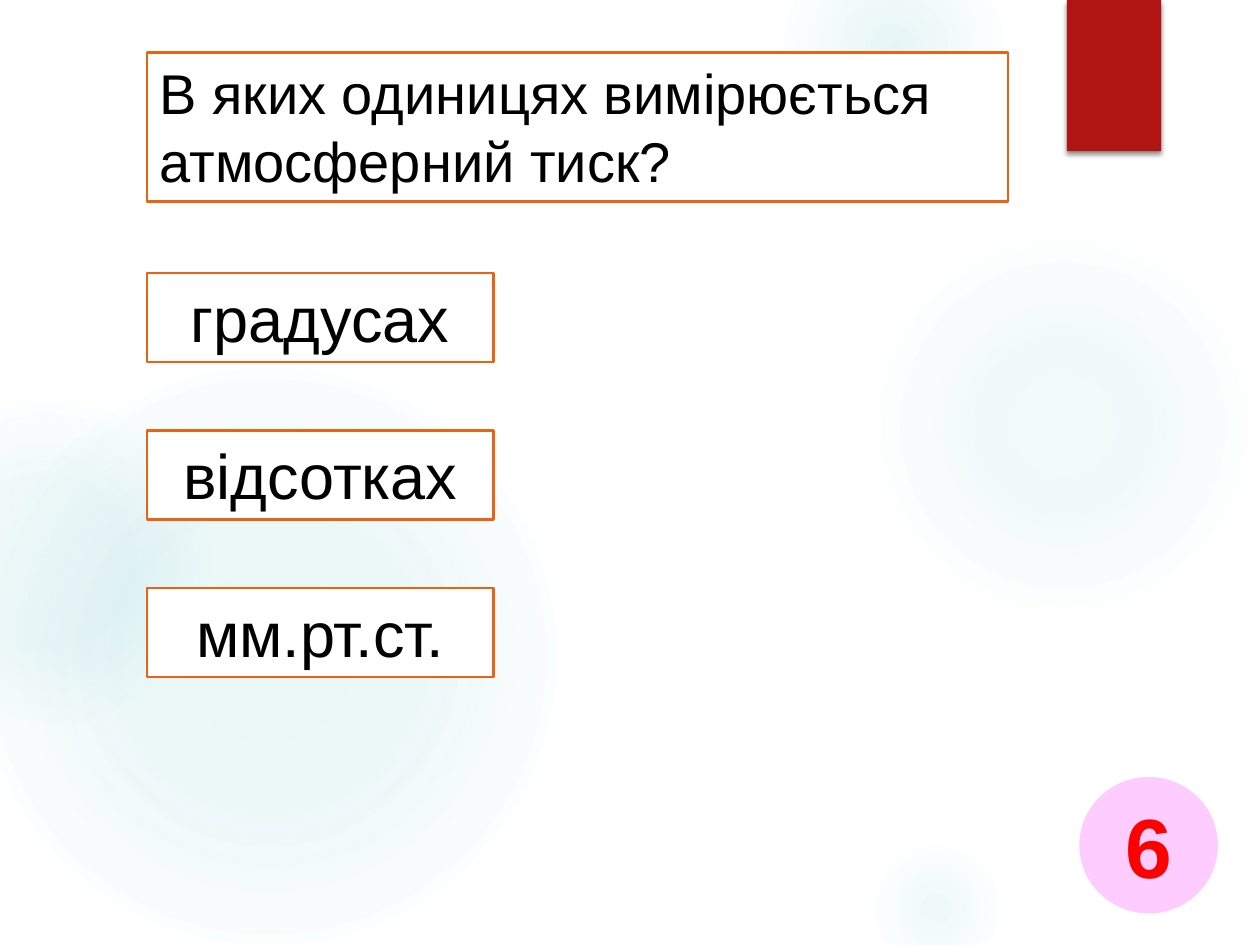
from dataclasses import dataclass

from pptx import Presentation
from pptx.dml.color import RGBColor
from pptx.enum.shapes import MSO_SHAPE
from pptx.enum.text import MSO_ANCHOR, MSO_AUTO_SIZE, PP_ALIGN
from pptx.oxml import parse_xml
from pptx.oxml.ns import nsdecls, qn
from pptx.util import Inches, Pt


@dataclass(frozen=True)
class Theme:
    font: str = "Arial"
    paper: str = "FFFFFF"
    ink: str = "000000"
    border: str = "EA6312"
    ribbon: str = "B01513"
    glow: str = "4CB9C3"
    badge: str = "FFCCFF"
    number: str = "FF0000"
    border_width: float = 1.5
    question_size: int = 32
    answer_size: int = 36
    number_size: int = 48


class QuizSlide:
    """Places elements on a grid of 120 columns by 90 rows."""

    COLUMNS, ROWS = 120, 90

    def __init__(self, presentation, theme):
        self.theme = theme
        self.column = presentation.slide_width / self.COLUMNS
        self.row = presentation.slide_height / self.ROWS
        self.slide = presentation.slides.add_slide(presentation.slide_layouts[5])

    def box(self, column, row, columns, rows):
        return (round(column * self.column), round(row * self.row),
                round(columns * self.column), round(rows * self.row))

    def shape(self, kind, place, color):
        shape = self.slide.shapes.add_shape(kind, *self.box(*place))
        shape.shadow.inherit = False
        shape.line.fill.background()
        self.paint(shape, color)
        return shape

    def paint(self, shape, color):
        shape.fill.solid()
        shape.fill.fore_color.rgb = RGBColor.from_string(color)

    def outline(self, shape):
        shape.line.color.rgb = RGBColor.from_string(self.theme.border)
        shape.line.width = Pt(self.theme.border_width)

    def set_text(self, shape, text, size, color, alignment=PP_ALIGN.CENTER,
                 bold=False, **frame_format):
        frame = shape.text_frame
        frame_format = {"word_wrap": True, "vertical_anchor": MSO_ANCHOR.TOP,
                        "auto_size": MSO_AUTO_SIZE.SHAPE_TO_FIT_TEXT, **frame_format}
        for name, value in frame_format.items():
            setattr(frame, name, value)
        frame.text = text
        paragraph = frame.paragraphs[0]
        paragraph.alignment = alignment
        font = paragraph.runs[0].font
        for name, value in {"name": self.theme.font, "size": Pt(size), "bold": bold}.items():
            setattr(font, name, value)
        font.color.rgb = RGBColor.from_string(color)

    def glow(self, column, row, diameter, stops):
        """Draw a circle that fades outwards; stops are (position, opacity) in percent."""
        place = (column, row, diameter, diameter)
        shape = self.shape(MSO_SHAPE.OVAL, place, self.theme.glow)
        stop_xml = "".join(
            f'<a:gs pos="{position * 1000}"><a:srgbClr val="{self.theme.glow}">'
            f'<a:alpha val="{opacity * 1000}"/></a:srgbClr></a:gs>'
            for position, opacity in stops)
        gradient = parse_xml(
            f'<a:gradFill {nsdecls("a")} rotWithShape="1"><a:gsLst>{stop_xml}</a:gsLst>'
            '<a:path path="circle"><a:fillToRect l="50000" t="50000" r="50000" b="50000"/>'
            '</a:path></a:gradFill>')
        properties = shape._element.spPr
        properties.replace(properties.find(qn("a:solidFill")), gradient)

    def ribbon(self, *place):
        shape = self.shape(MSO_SHAPE.RECTANGLE, place, self.theme.ribbon)
        shape._element.spPr.find(qn("a:effectLst")).append(parse_xml(
            f'<a:outerShdw {nsdecls("a")} blurRad="{Pt(3)}" dist="{Pt(2)}" dir="5400000" '
            'rotWithShape="0"><a:srgbClr val="000000"><a:alpha val="45000"/></a:srgbClr>'
            '</a:outerShdw>'))

    def question(self, text, *place):
        title = self.slide.shapes.title
        for name, value in zip(("left", "top", "width", "height"), self.box(*place)):
            setattr(title, name, value)
        self.slide.shapes._spTree.append(title._element)  # in front of the glows
        self.paint(title, self.theme.paper)
        self.outline(title)
        self.set_text(title, text, self.theme.question_size, self.theme.ink, PP_ALIGN.LEFT)

    def answer(self, text, *place):
        shape = self.shape(MSO_SHAPE.RECTANGLE, place, self.theme.paper)
        self.outline(shape)
        self.set_text(shape, text, self.theme.answer_size, self.theme.ink)

    def badge(self, text, *place):
        shape = self.shape(MSO_SHAPE.OVAL, place, self.theme.badge)
        self.set_text(shape, text, self.theme.number_size, self.theme.number, bold=True,
                      vertical_anchor=MSO_ANCHOR.MIDDLE, auto_size=MSO_AUTO_SIZE.NONE)


GLOWS = [  # column, row, diameter, centre opacity, middle opacity, fade end
    (82.7, 22, 37, 7, 6, 69),
    (74.6, -6, 21, 14, 7, 73),
    (82.7, 80, 13, 9, 5, 66),
    (-2, 35, 55, 11, 10, 75),
    (-11, 38, 31, 8, 8, 72),
]
ANSWERS = ["градусах", "відсотках", "мм.рт.ст."]
LEFT, FIRST_ANSWER, ANSWER_STEP = 14, 26, 15


def main():
    presentation = Presentation()
    presentation.slide_width, presentation.slide_height = Inches(10), Inches(7.5)
    quiz = QuizSlide(presentation, Theme())
    for column, row, diameter, centre, middle, fade in GLOWS:
        quiz.glow(column, row, diameter, [(0, centre), (36, middle), (fade, 0), (100, 0)])
    quiz.ribbon(101.6, 0, 9, 14.4)
    quiz.question("В яких одиницях вимірюється атмосферний тиск?", LEFT, 5, 82, 14.2)
    for index, text in enumerate(ANSWERS):
        quiz.answer(text, LEFT, FIRST_ANSWER + index * ANSWER_STEP, 33, 8.5)
    quiz.badge("6", 102.8, 74, 13.2, 13)
    presentation.save("out.pptx")


if __name__ == "__main__":
    main()
